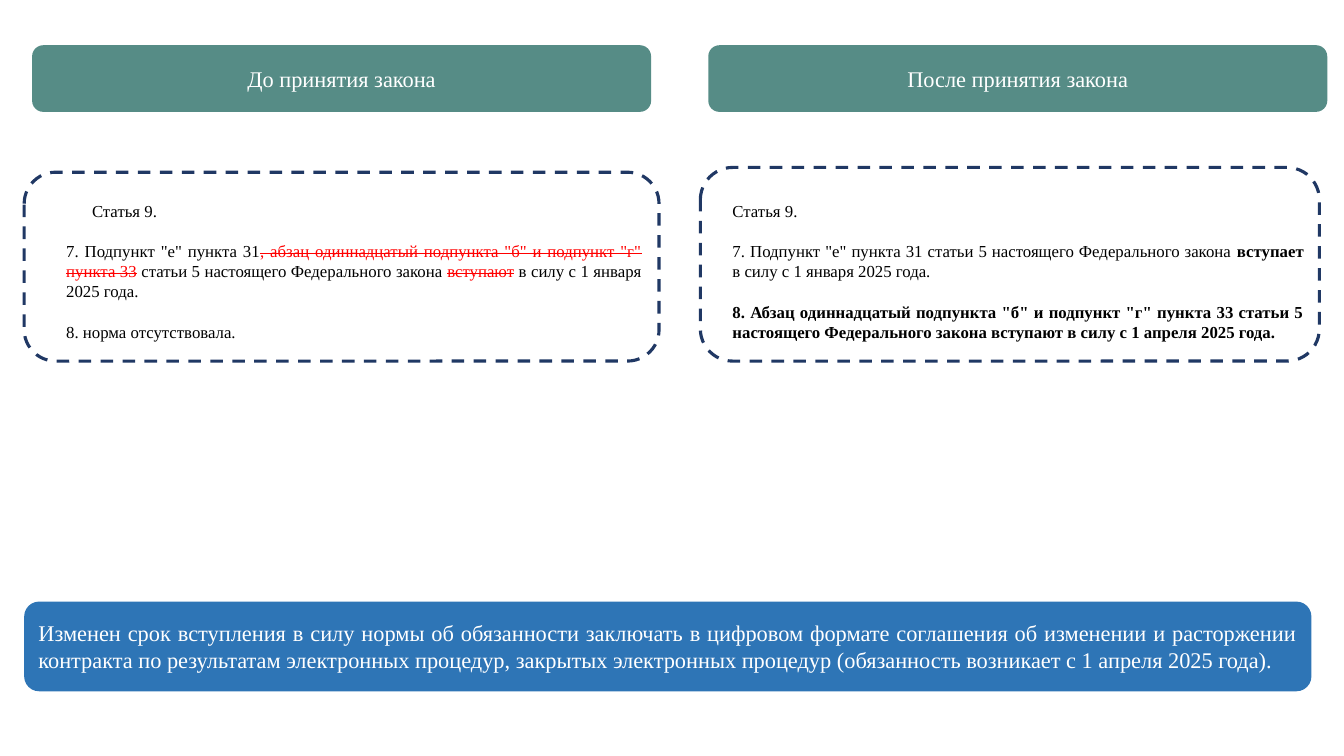
import pptx
import pptx.dml.color
import pptx.enum.dml
import pptx.enum.shapes
import pptx.enum.text
import pptx.util

Cm = pptx.util.Cm
Pt = pptx.util.Pt
ALIGN = pptx.enum.text.PP_ALIGN

COLORS = {
    "header": "568C86",
    "frame": "203864",
    "summary": "2E75B6",
    "light": "FFFFFF",
    "text": "000000",
    "removed": "FF0000",
}
FONT = "Times New Roman"
HEADER_TOP, HEADER_WIDTH, HEADER_HEIGHT = 1.14, 15.6, 1.68
HEADER_OFFSET = 0.2
FRAME_BOTTOM = 9.1
TEXT_TOP = 4.93

# Each paragraph is a list of (text, style) pairs.
BEFORE = [
    [("Статья 9.", "plain")],
    [
        ("7. Подпункт \"е\" пункта 31", "plain"),
        (", абзац одиннадцатый подпункта \"б\" и подпункт \"г\" пункта 33", "removed"),
        (" статьи 5 настоящего Федерального закона ", "plain"),
        ("вступают", "removed"),
        (" в силу с 1 января 2025 года.", "plain"),
    ],
    [("8. норма отсутствовала.", "plain")],
]
AFTER = [
    [("Статья 9.", "plain")],
    [
        ("7. Подпункт \"е\" пункта 31 статьи 5 настоящего Федерального закона ", "plain"),
        ("вступает", "added"),
        (" в силу с 1 января 2025 года.", "plain"),
    ],
    [("8. Абзац одиннадцатый подпункта \"б\" и подпункт \"г\" пункта 33 статьи 5 "
      "настоящего Федерального закона вступают в силу с 1 апреля 2025 года.", "added")],
]
SUMMARY = ("Изменен срок вступления в силу нормы об обязанности заключать в цифровом "
           "формате соглашения об изменении и расторжении контракта по результатам "
           "электронных процедур, закрытых электронных процедур (обязанность возникает "
           "с 1 апреля 2025 года).")


def color(name):
    return pptx.dml.color.RGBColor.from_string(COLORS[name])


def add_run(paragraph, text, size, color_name):
    run = paragraph.add_run()
    run.text = text
    run.font.name = FONT
    run.font.size = Pt(size)
    run.font.color.rgb = color(color_name)
    return run


def add_rounded(slide, left, top, width, height):
    shape = slide.shapes.add_shape(
        pptx.enum.shapes.MSO_SHAPE.ROUNDED_RECTANGLE,
        Cm(left), Cm(top), Cm(width), Cm(height))
    shape.shadow.inherit = False
    return shape


def add_banner(slide, box, fill, text, alignment):
    """Add a filled rounded bar with one light paragraph."""
    shape = add_rounded(slide, *box)
    shape.fill.solid()
    shape.fill.fore_color.rgb = color(fill)
    shape.line.fill.background()
    shape.text_frame.word_wrap = True
    shape.text_frame.vertical_anchor = pptx.enum.text.MSO_ANCHOR.MIDDLE
    paragraph = shape.text_frame.paragraphs[0]
    paragraph.alignment = alignment
    add_run(paragraph, text, 16, "light")


def add_frame(slide, left, top, width, height):
    shape = add_rounded(slide, left, top, width, height)
    shape.fill.background()
    shape.line.color.rgb = color("frame")
    shape.line.width = Pt(2.25)
    shape.line.dash_style = pptx.enum.dml.MSO_LINE.DASH


def add_article(slide, box, paragraphs, first_indent):
    """Add the law text, with removed words struck out and added words bold."""
    text_box = slide.shapes.add_textbox(*[Cm(length) for length in box])
    text_frame = text_box.text_frame
    text_frame.word_wrap = True
    for index, parts in enumerate(paragraphs):
        paragraph = text_frame.add_paragraph() if index else text_frame.paragraphs[0]
        paragraph.alignment = ALIGN.JUSTIFY
        if index:
            paragraph.space_before = Pt(14.4)
        elif first_indent:
            paragraph._p.get_or_add_pPr().set("indent", str(Cm(first_indent)))
        for text, style in parts:
            removed = style == "removed"
            run = add_run(paragraph, text, 12, "removed" if removed else "text")
            if removed:
                run.font._element.set("strike", "sngStrike")
            elif style == "added":
                run.font.bold = True


def add_column(slide, left, frame_top, frame_width, title, paragraphs,
               text_offset, text_width, first_indent=0):
    """Add one side of the comparison: header, dashed frame and law text."""
    header_box = (left + HEADER_OFFSET, HEADER_TOP, HEADER_WIDTH, HEADER_HEIGHT)
    add_banner(slide, header_box, "header", title, ALIGN.CENTER)
    add_frame(slide, left, frame_top, frame_width, FRAME_BOTTOM - frame_top)
    text_box = (left + text_offset, TEXT_TOP, text_width, FRAME_BOTTOM - TEXT_TOP)
    add_article(slide, text_box, paragraphs, first_indent)


def main():
    presentation = pptx.Presentation()
    presentation.slide_width = Cm(33.87)
    presentation.slide_height = Cm(19.05)
    slide = presentation.slides.add_slide(presentation.slide_layouts[6])
    add_column(slide, 0.61, 4.34, 16, "До принятия закона", BEFORE,
               0.81, 15, first_indent=0.65)
    add_column(slide, 17.65, 4.22, 15.6, "После принятия закона", AFTER, 0.56, 14.9)
    add_banner(slide, (0.61, 15.16, 32.44, 2.26), "summary", SUMMARY, ALIGN.JUSTIFY)
    presentation.save("out.pptx")


if __name__ == "__main__":
    main()
